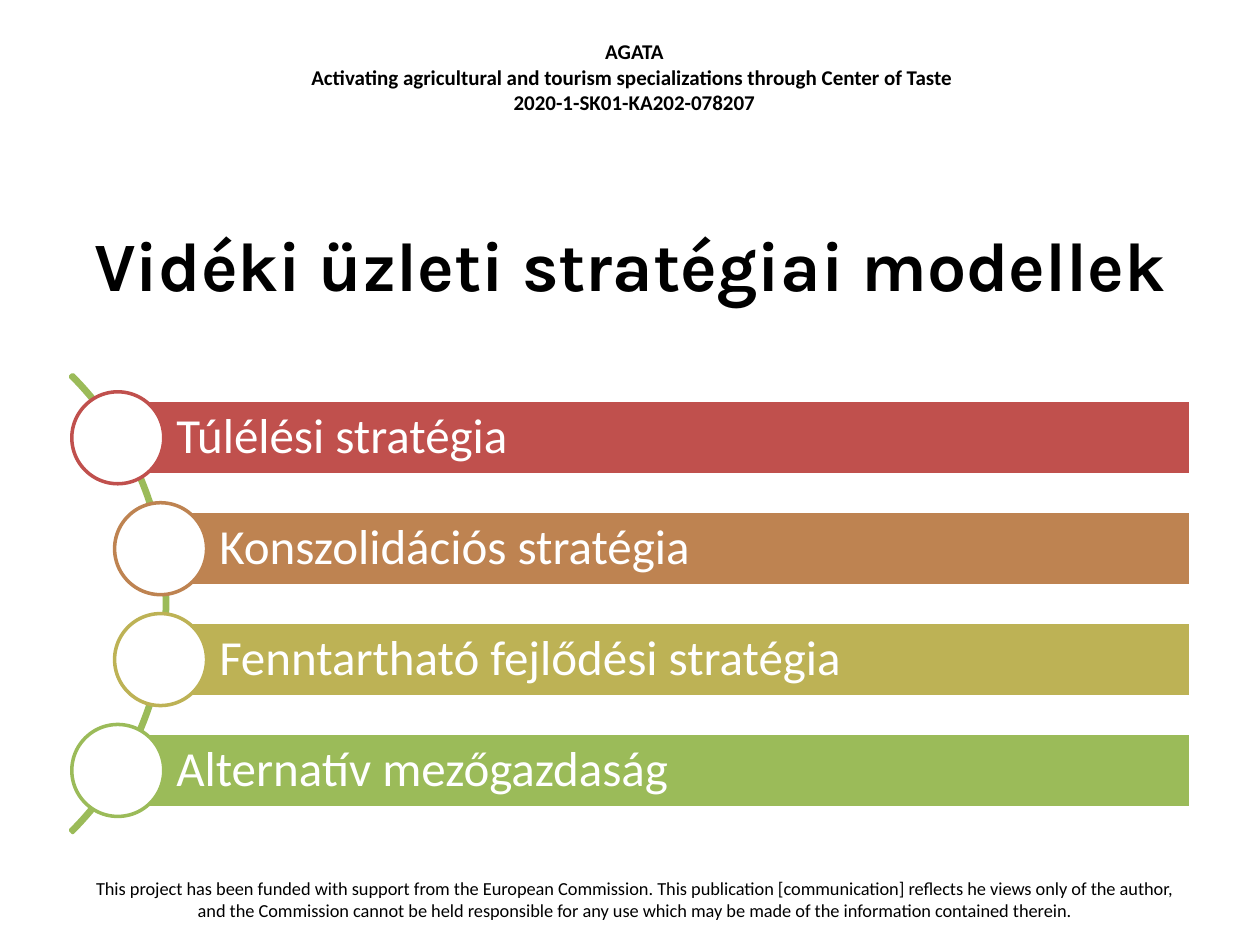
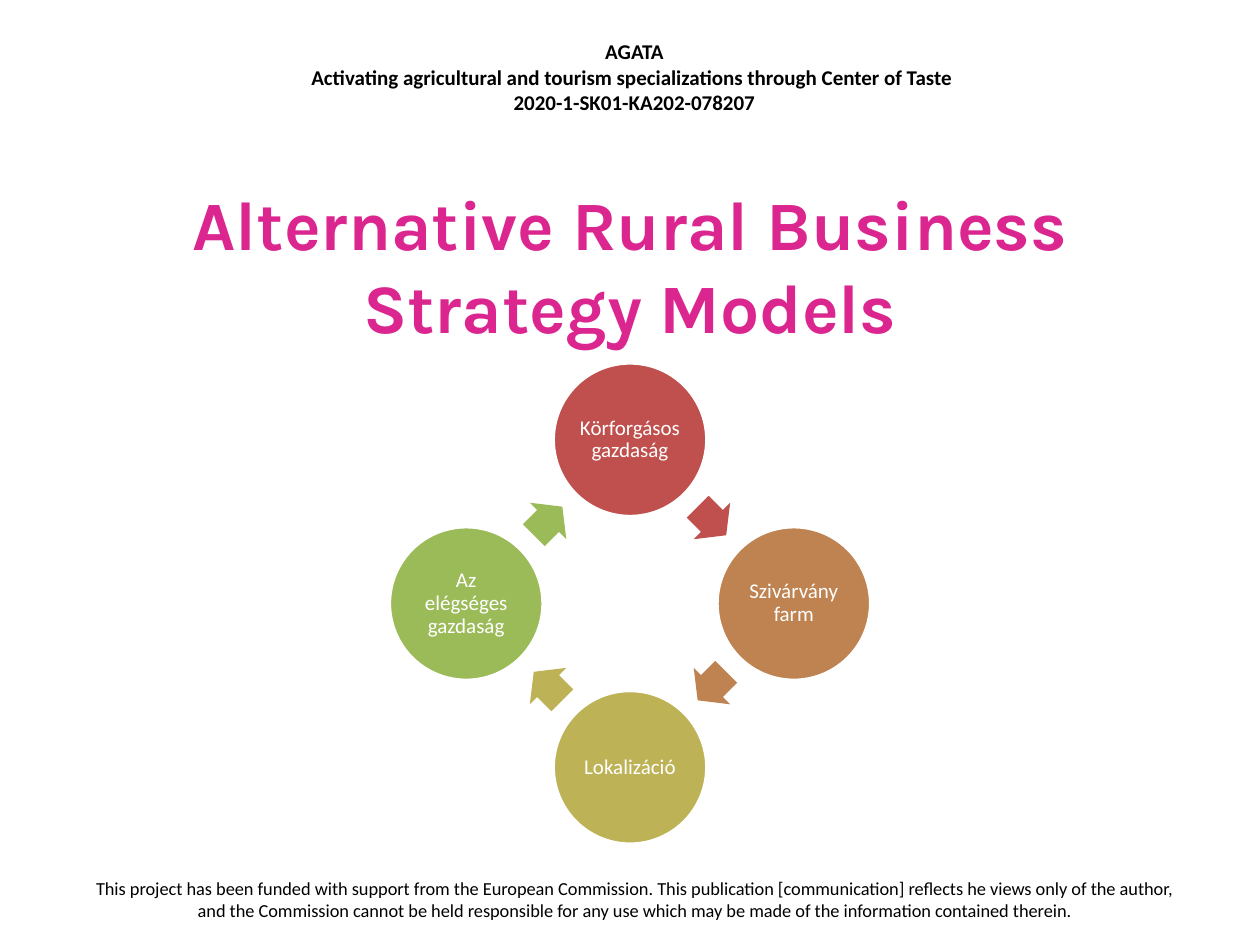
from math import cos, radians, sin
from pptx import Presentation
from pptx.dml.color import RGBColor
from pptx.enum.shapes import MSO_SHAPE
from pptx.enum.text import MSO_ANCHOR, MSO_AUTO_SIZE, PP_ALIGN
from pptx.util import Emu, Pt

SCALE = 9144
WHITE, BLACK, PINK = "FFFFFF", "000000", "DB2690"
HUES = ["C0504D", "BE8351", "BDB255", "9BBB59"]
HEAD = [
    "AGATA",
    "Activating agricultural and tourism specializations through Center of Taste ",
    "2020-1-SK01-KA202-078207",
]
FOOT = (
    "This project has been funded with support from the European Commission. "
    "This publication [communication] reflects he views only of the author, "
    "and the Commission cannot be held responsible for any use which may be "
    "made of the information contained therein."
)
PLANS = [
    "Túlélési stratégia",
    "Konszolidációs stratégia",
    "Fenntartható fejlődési stratégia",
    "Alternatív mezőgazdaság",
]
MODELS = [
    "Körforgásos gazdaság",
    "Szivárvány farm",
    "Lokalizáció",
    "Az elégséges gazdaság",
]


def px(num):
    return Emu(num * SCALE)


def area(left, top, width, height):
    return [px(num) for num in (left, top, width, height)]


def tint(code):
    return RGBColor.from_string(code)


def write(shape, lines, size, color, bold=False, face="Calibri",
          align=PP_ALIGN.CENTER, anchor=MSO_ANCHOR.MIDDLE,
          inset=(10, 5, 10, 5), lead=1.0):
    frame = shape.text_frame
    frame.word_wrap = True
    frame.auto_size = MSO_AUTO_SIZE.NONE
    frame.vertical_anchor = anchor
    (frame.margin_left, frame.margin_top,
     frame.margin_right, frame.margin_bottom) = [px(num) for num in inset]
    for spot, line in enumerate(lines):
        para = frame.add_paragraph() if spot else frame.paragraphs[0]
        para.alignment = align
        para.line_spacing = lead
        run = para.add_run()
        run.text = line
        font = run.font
        font.name, font.size, font.bold = face, Pt(size), bold
        font.color.rgb = tint(color)


def draw(slide, kind, box, fill=None, line=None):
    shape = slide.shapes.add_shape(kind, *area(*box))
    shape.shadow.inherit = False
    if fill:
        shape.fill.solid()
        shape.fill.fore_color.rgb = tint(fill)
    else:
        shape.fill.background()
    if line:
        shape.line.color.rgb = tint(line)
        shape.line.width = Pt(2)
    else:
        shape.line.fill.background()
    return shape


def label(slide, box, lines, size, **style):
    text = slide.shapes.add_textbox(*area(*box))
    write(text, lines, size, BLACK, anchor=MSO_ANCHOR.TOP, **style)


def start(deck, name, color):
    slide = deck.slides.add_slide(deck.slide_layouts[5])
    title = slide.shapes.title
    title.left, title.top, title.width, title.height = area(50, 147, 900, 125)
    write(title, [name], 39.6, color, bold=True, face="Karla")
    label(slide, (208, 26, 591, 71), HEAD, 12, bold=True)
    label(slide, (54, 691, 900, 47), [FOOT], 10.5, inset=(12, 5, 12, 5))
    return slide


def stack(slide):
    arc = draw(slide, MSO_SHAPE.BLOCK_ARC, (-381, 222, 514, 514), line=HUES[-1])
    for spot, value in enumerate((189, 27, 0.005)):
        arc.adjustments[spot] = value
    for step, (plan, hue) in enumerate(zip(PLANS, HUES)):
        left = 127 if step in (1, 2) else 93
        top = 318 + 88 * step
        bar = draw(slide, MSO_SHAPE.RECTANGLE, (left, top, 945 - left, 59), hue, WHITE)
        write(bar, [plan], 28, WHITE, align=PP_ALIGN.LEFT,
              inset=(47, 8, 8, 8), lead=0.9)
        draw(slide, MSO_SHAPE.OVAL, (left - 36, top - 7, 73, 73), WHITE, hue)


def orbit(reach, angle, width, height):
    turn = radians(angle)
    left = 500 + reach * cos(turn) - width / 2
    top = 479 + reach * sin(turn) - height / 2
    return round(left), round(top), width, height


def cycle(slide):
    for step, (model, hue) in enumerate(zip(MODELS, HUES)):
        turn = 90 * step
        disc = draw(slide, MSO_SHAPE.OVAL, orbit(130, turn - 90, 122, 122), hue, WHITE)
        write(disc, [model], 12, WHITE, inset=(2, 2, 2, 2), lead=0.9)
        arrow = draw(slide, MSO_SHAPE.RIGHT_ARROW, orbit(92, turn - 45, 32, 41), hue)
        arrow.adjustments[0] = 0.6
        arrow.adjustments[1] = 0.5
        arrow.rotation = turn + 45


def main():
    deck = Presentation()
    deck.slide_width, deck.slide_height = px(1000), px(750)
    stack(start(deck, "Vidéki üzleti stratégiai modellek", BLACK))
    cycle(start(deck, "Alternative Rural Business Strategy Models", PINK))
    deck.save("out.pptx")


if __name__ == "__main__":
    main()
